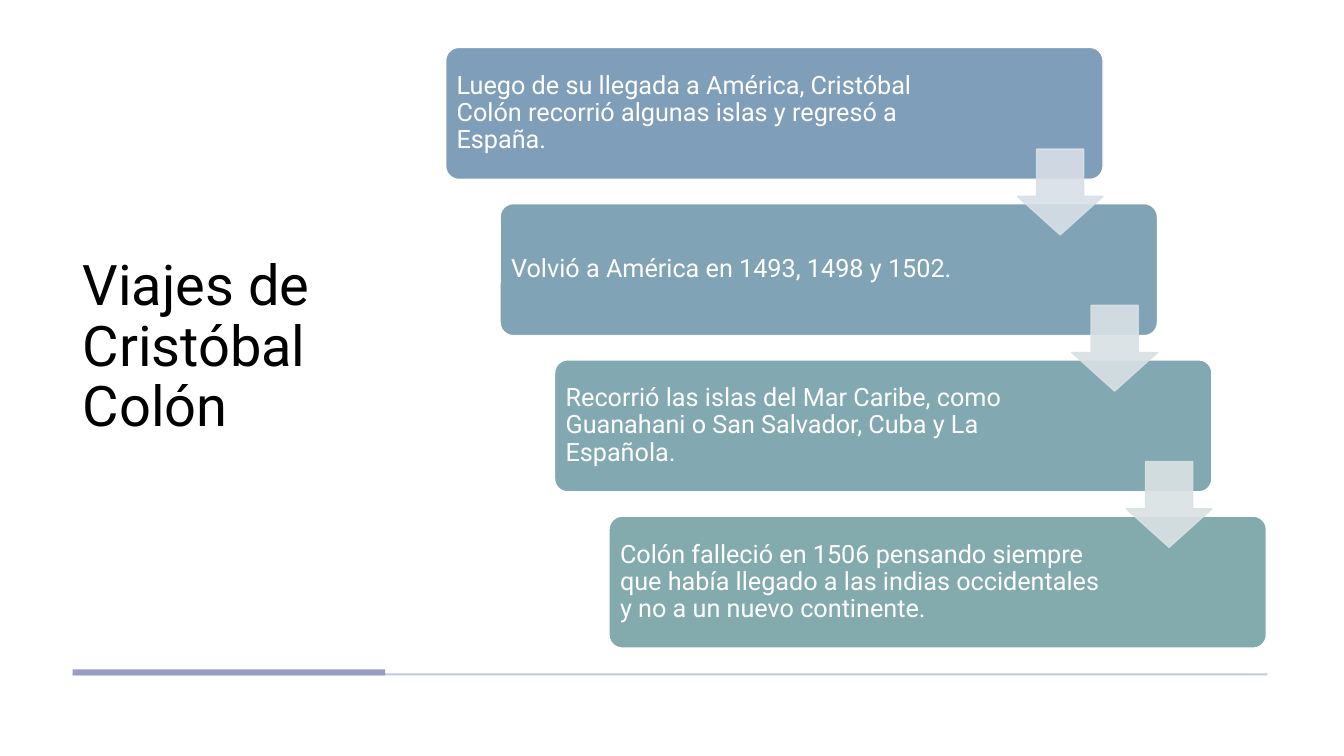
from lxml import etree
from pptx import Presentation
from pptx import util as u
from pptx.dml.color import RGBColor
from pptx.enum import shapes, text
from pptx.oxml.ns import qn

WHITE = RGBColor(0xFF, 0xFF, 0xFF)
BLACK = RGBColor(0x00, 0x00, 0x00)
RULE = RGBColor(0xBD, 0xCC, 0xDB)
ACCENT = RGBColor(0x96, 0x9C, 0xC6)
CARD_FILLS = [
    RGBColor(0x7F, 0x9E, 0xBA),
    RGBColor(0x80, 0xA4, 0xB6),
    RGBColor(0x82, 0xA8, 0xB1),
    RGBColor(0x83, 0xAB, 0xAD),
]
ARROW_FILLS = [
    RGBColor(0xD8, 0xDF, 0xE7),
    RGBColor(0xD8, 0xE1, 0xE5),
    RGBColor(0xD9, 0xE2, 0xE3),
]
FONT = "Roboto"
MARGIN, TOP = 0.72, 0.47
CARD_LEFT, CARD_W, CARD_H = 4.42, 6.52, 1.31
STEP_X, STEP_Y = 0.54, 1.55
PAD = 0.04
TEXT_W = 5.04
ARROW = 0.85
ARROW_X, ARROW_Y = 5.67, 1.01

EVENTS = [
    "Luego de su llegada a América, Cristóbal Colón recorrió algunas islas y regresó a España.",
    "Volvió a América en 1493, 1498 y 1502.",
    "Recorrió las islas del Mar Caribe, como Guanahani o San Salvador, Cuba y La Española.",
    "Colón falleció en 1506 pensando siempre que había llegado a las indias occidentales y no a un nuevo continente.",
]


def box(*lengths):
    """Convert inches to lengths."""
    return [u.Inches(n) for n in lengths]


def write(sp, content, size=18, color=WHITE, inset=0.07):
    """Write one left-aligned, vertically centred paragraph."""
    tf = sp.text_frame
    tf.word_wrap = True
    tf.auto_size = text.MSO_AUTO_SIZE.NONE
    tf.vertical_anchor = text.MSO_ANCHOR.MIDDLE
    tf.margin_left = tf.margin_right = tf.margin_top = tf.margin_bottom = u.Inches(inset)
    p = tf.paragraphs[0]
    p.alignment = text.PP_ALIGN.LEFT
    p.line_spacing = 0.9
    r = p.add_run()
    r.text = content
    r.font.size = u.Pt(size)
    r.font.name = FONT
    r.font.color.rgb = color


def add_block(s, kind, place, fill, line=None, adjust=(), opacity=None):
    """Add a flat preset shape, optionally outlined and translucent."""
    sp = s.shapes.add_shape(kind, *box(*place))
    sp.shadow.inherit = False
    for i, value in enumerate(adjust):
        sp.adjustments[i] = value
    sp.fill.solid()
    sp.fill.fore_color.rgb = fill
    if line is None:
        sp.line.fill.background()
    else:
        sp.line.color.rgb = line
        sp.line.width = u.Pt(1)
    if opacity is not None:
        for clr in sp.element.spPr.iter(qn("a:srgbClr")):
            etree.SubElement(clr, qn("a:alpha"), val=str(opacity * 1000))
    return sp


def add_title(s, content):
    """Place the title at the left of the staircase."""
    title = s.shapes.title
    title.left, title.top, title.width, title.height = box(MARGIN, TOP, 3.1, 5.97)
    write(title, content, size=40, color=BLACK, inset=0.1)


def add_card(s, i, content):
    """Add one step of the staircase with its text."""
    x, y = CARD_LEFT + i * STEP_X, TOP + i * STEP_Y
    add_block(s, shapes.MSO_SHAPE.ROUNDED_RECTANGLE, (x, y, CARD_W, CARD_H),
              CARD_FILLS[i], line=WHITE, adjust=[0.1])
    label = s.shapes.add_textbox(*box(x + PAD, y + PAD, TEXT_W, CARD_H - 2 * PAD))
    write(label, content)


def add_arrow(s, i, color):
    """Add the arrow leading from one step to the next."""
    x, y = CARD_LEFT + ARROW_X + i * STEP_X, TOP + ARROW_Y + i * STEP_Y
    add_block(s, shapes.MSO_SHAPE.DOWN_ARROW, (x, y, ARROW, ARROW), color,
              line=color, adjust=[0.45, 0.55], opacity=90)
    arrow = s.shapes[-1]
    arrow.adjustments[0], arrow.adjustments[1] = 0.55, 0.45


def main():
    """Build and save the slide."""
    prs = Presentation()
    prs.slide_width, prs.slide_height = box(13.33, 7.5)
    s = prs.slides.add_slide(prs.slide_layouts[5])
    add_title(s, "Viajes de Cristóbal Colón")
    add_block(s, shapes.MSO_SHAPE.RECTANGLE, (MARGIN, 6.68, 11.85, 0.02), RULE)
    add_block(s, shapes.MSO_SHAPE.RECTANGLE, (MARGIN, 6.64, 3.1, 0.06), ACCENT)
    for i, event in enumerate(EVENTS):
        add_card(s, i, event)
    for i, color in enumerate(ARROW_FILLS):
        add_arrow(s, i, color)
    prs.save("out.pptx")


if __name__ == "__main__":
    main()
